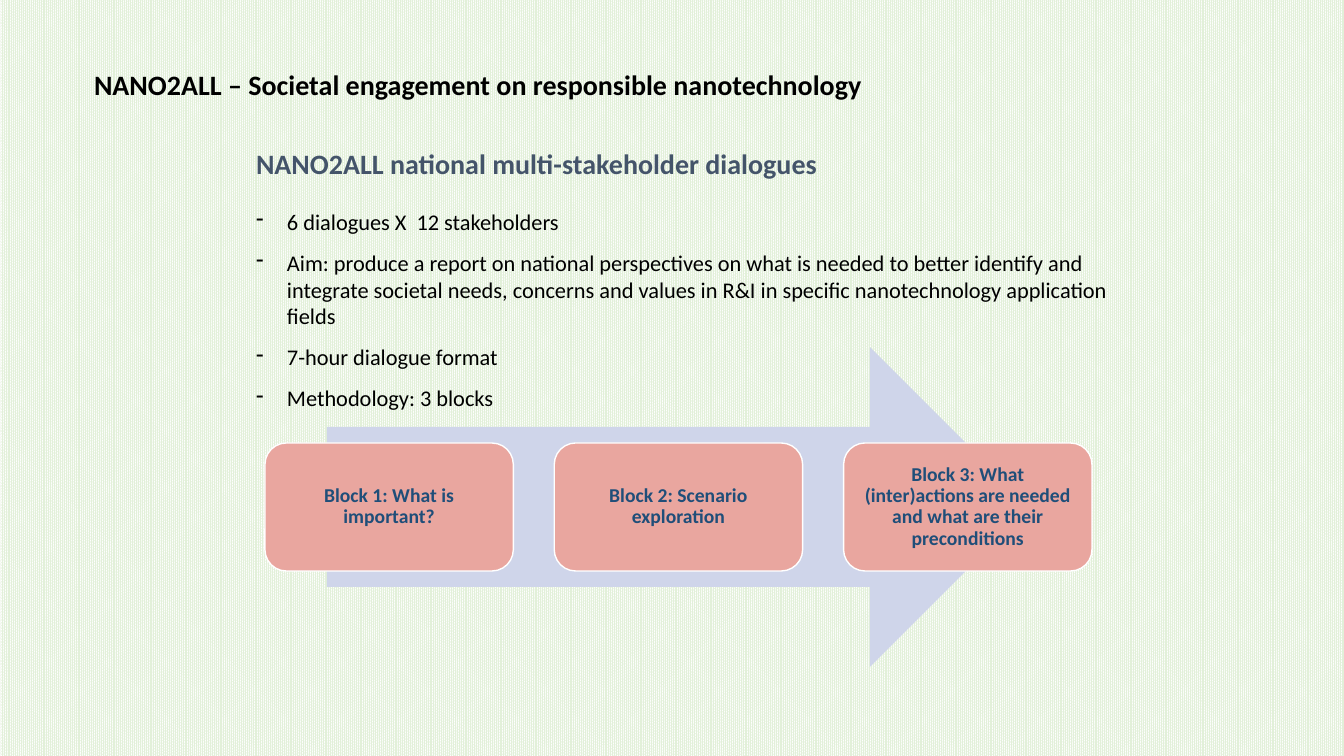
from lxml.etree import SubElement
from pptx import Presentation
from pptx.dml.color import RGBColor
from pptx.enum.dml import MSO_PATTERN
from pptx.enum.shapes import MSO_SHAPE as Shape
from pptx.enum.text import MSO_ANCHOR as Anchor, MSO_AUTO_SIZE as Fit, PP_ALIGN as Align
from pptx.oxml.ns import qn
from pptx.util import Pt

SCALE = 914400 / 100.8
TITLE = "NANO2ALL – Societal engagement on responsible nanotechnology"
HEAD = "NANO2ALL national multi-stakeholder dialogues"
POINTS = [
    "6 dialogues X  12 stakeholders",
    "Aim: produce a report on national perspectives on what is needed to better identify and "
    "integrate societal needs, concerns and values in R&I in specific nanotechnology application fields",
    "7-hour dialogue format",
    "Methodology: 3 blocks",
]
BLOCKS = [
    "Block 1: What is important?",
    "Block 2: Scenario exploration",
    "Block 3: What (inter)actions are needed and what are their preconditions",
]


def px(*nums):
    return [round(n * SCALE) for n in nums]


def color(code):
    return RGBColor.from_string(code)


def assign(item, values):
    for name, value in values.items():
        setattr(item, name, value)


def style(par, size, code, bold=False, align=Align.LEFT, leading=1.0):
    assign(par, {"alignment": align, "line_spacing": leading})
    assign(par.font, {"name": "Calibri", "size": Pt(size), "bold": bold})
    par.font.color.rgb = color(code)


def setup(frame, left=10, top=5, right=10, bottom=5, anchor=Anchor.TOP):
    sides = ("margin_left", "margin_top", "margin_right", "margin_bottom")
    assign(frame, dict(zip(sides, px(left, top, right, bottom))))
    assign(frame, {"word_wrap": True, "auto_size": Fit.NONE, "vertical_anchor": anchor})


def title(slide, box):
    shape = slide.shapes.title
    assign(shape, dict(zip(("left", "top", "width", "height"), px(*box))))
    setup(shape.text_frame, left=0)
    shape.text_frame.text = TITLE
    style(shape.text_frame.paragraphs[0], 20, "000000", bold=True)


def heading(slide, box):
    frame = slide.shapes.add_textbox(*px(*box)).text_frame
    setup(frame)
    frame.text = HEAD
    style(frame.paragraphs[0], 20, "44546A", bold=True)


def bullets(slide, box):
    frame = slide.shapes.add_textbox(*px(*box)).text_frame
    setup(frame)
    frame.text = "\n".join(POINTS)
    indent = px(31)[0]
    for row, par in enumerate(frame.paragraphs):
        props = par._p.get_or_add_pPr()
        props.set("marL", str(indent))
        props.set("indent", str(-indent))
        SubElement(props, qn("a:buChar")).set("char", "-")
        style(par, 16, "000000")
        par.space_before = Pt(10 if row else 0)


def panel(slide, kind, box, fill):
    shape = slide.shapes.add_shape(kind, *px(*box))
    shape.shadow.inherit = False
    shape.fill.solid()
    shape.fill.fore_color.rgb = color(fill)
    return shape


def process(slide, box):
    """Place the blocks in a row across the middle of a wide arrow."""
    left, top, width, height = box
    inset, gap = 62, 41
    arrow = (left + inset, top, width - 2 * inset, height)
    panel(slide, Shape.RIGHT_ARROW, arrow, "CFD5EA").line.fill.background()
    wide = (width - gap * (len(BLOCKS) - 1)) / len(BLOCKS)
    tall = height * 0.4
    for col, text in enumerate(BLOCKS):
        place = (left + col * (wide + gap), top + (height - tall) / 2, wide, tall)
        block = panel(slide, Shape.ROUNDED_RECTANGLE, place, "E9A69F")
        block.line.color.rgb = color("FFFFFF")
        block.line.width = Pt(1)
        setup(block.text_frame, 6, 6, 6, 6, Anchor.MIDDLE)
        block.text_frame.text = text
        style(block.text_frame.paragraphs[0], 14, "1F4E79", True, Align.CENTER, 0.9)


def backdrop(slide):
    fill = slide.background.fill
    fill.patterned()
    fill.pattern = MSO_PATTERN.PERCENT_90
    fill.fore_color.rgb = color("E2F0D9")
    fill.back_color.rgb = color("FFFFFF")


def main():
    deck = Presentation()
    deck.slide_width, deck.slide_height = px(1344, 756)
    slide = deck.slides.add_slide(deck.slide_layouts[5])
    backdrop(slide)
    title(slide, (94, 62, 1045, 44))
    process(slide, (265, 347, 827, 320))
    heading(slide, (246, 141, 930, 44))
    bullets(slide, (246, 203, 905, 251))
    deck.save("out.pptx")


if __name__ == "__main__":
    main()
